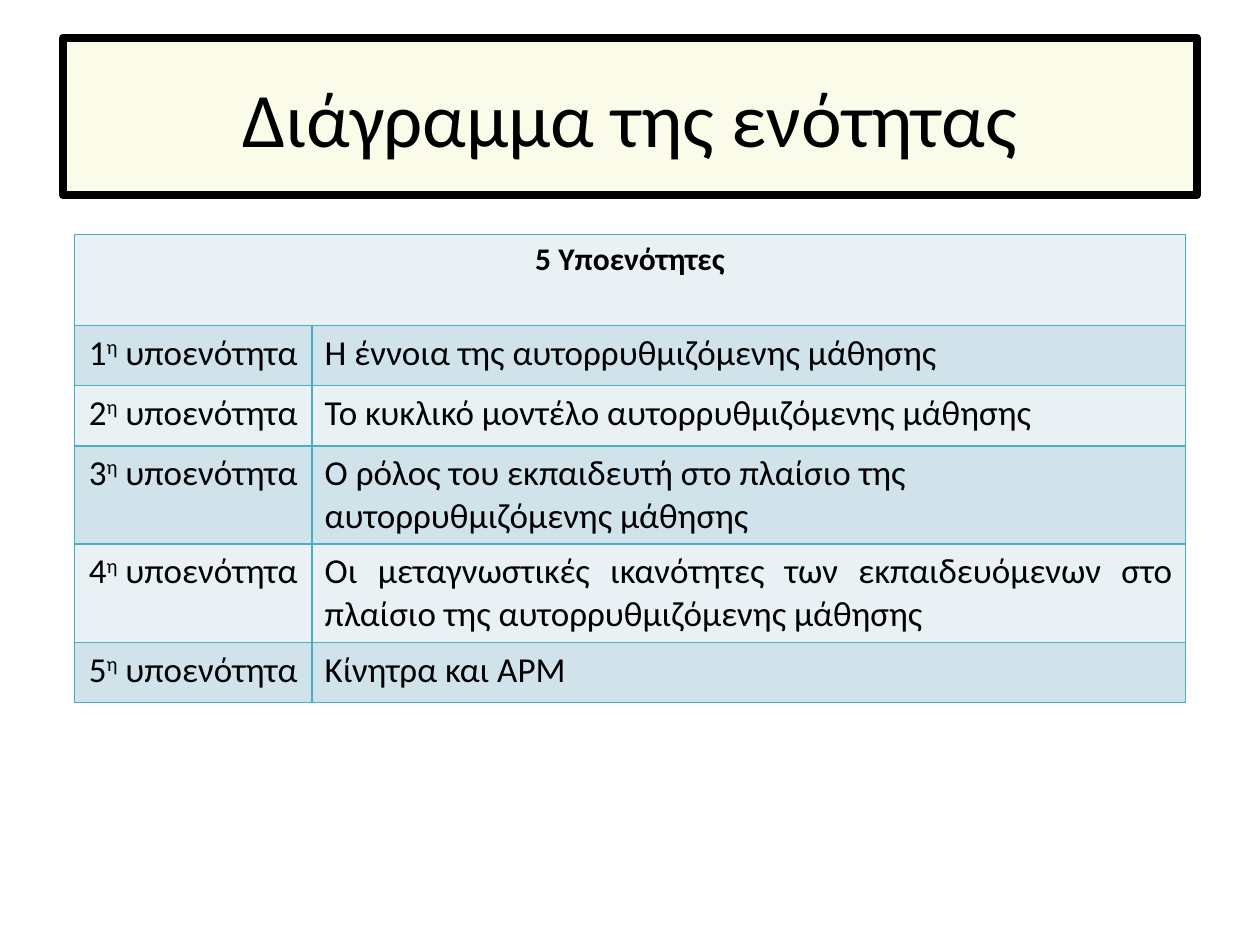
from lxml import etree
from pptx import Presentation
from pptx.dml.color import RGBColor
from pptx.enum.text import MSO_ANCHOR, PP_ALIGN
from pptx.oxml.ns import qn
from pptx.util import Pt

CENTER = PP_ALIGN.CENTER
JUSTIFY = PP_ALIGN.JUSTIFY
LEFT = PP_ALIGN.LEFT
MIDDLE = MSO_ANCHOR.MIDDLE

BLACK = RGBColor(0x00, 0x00, 0x00)
CREAM = RGBColor(0xFB, 0xFB, 0xE9)
TEAL = RGBColor(0x4B, 0xAC, 0xC6)
PALE_BLUE = RGBColor(0xE9, 0xF1, 0xF5)
LIGHT_BLUE = RGBColor(0xD0, 0xE3, 0xEA)

FONT = "Calibri"
TITLE_ONLY = 5
TITLE = "Διάγραμμα της ενότητας"
TABLE_HEADING = "5 Υποενότητες"
SUBUNITS = [
    ("Η έννοια της αυτορρυθμιζόμενης μάθησης", JUSTIFY),
    ("Το κυκλικό μοντέλο αυτορρυθμιζόμενης μάθησης", JUSTIFY),
    ("Ο ρόλος του εκπαιδευτή στο πλαίσιο της αυτορρυθμιζόμενης μάθησης", LEFT),
    ("Οι μεταγνωστικές ικανότητες των εκπαιδευόμενων στο πλαίσιο της "
     "αυτορρυθμιζόμενης μάθησης", JUSTIFY),
    ("Κίνητρα και ΑΡΜ", JUSTIFY),
]
COLUMN_SHARES = [0.214, 0.786]
ROW_HEIGHTS = [52, 34.4, 34.4, 56, 56, 34.4]


def write_text(paragraph, text, size=20, bold=False, align=LEFT, baseline=0):
    """Add a formatted run to a paragraph."""
    paragraph.alignment = align
    run = paragraph.add_run()
    run.text = text
    run.font.name = FONT
    run.font.size = Pt(size)
    run.font.bold = bold
    run.font.color.rgb = BLACK
    if baseline:
        run._r.get_or_add_rPr().set("baseline", str(baseline * 1000))


def style_cell(cell, fill):
    """Fill a cell and draw its four borders."""
    cell.fill.solid()
    cell.fill.fore_color.rgb = fill
    properties = cell._tc.get_or_add_tcPr()
    for position, side in enumerate(("lnL", "lnR", "lnT", "lnB")):
        border = etree.Element(qn(f"a:{side}"), w=str(Pt(1)))
        solid = etree.SubElement(border, qn("a:solidFill"))
        etree.SubElement(solid, qn("a:srgbClr"), val=str(TEAL))
        properties.insert(position, border)


def add_title(slide, left, top, width, height):
    """Place the framed title in the given box."""
    title = slide.shapes.title
    title.left, title.top = Pt(left), Pt(top)
    title.width, title.height = Pt(width), Pt(height)
    title.fill.solid()
    title.fill.fore_color.rgb = CREAM
    title.line.color.rgb = BLACK
    title.line.width = Pt(4.5)
    etree.SubElement(title.line._get_or_add_ln(), qn("a:round"))
    title.text_frame.vertical_anchor = MIDDLE
    write_text(title.text_frame.paragraphs[0], TITLE, size=44, align=CENTER)


def add_subunit_table(slide, left, top, width):
    """Place the table of subunits at the given corner and width."""
    table = slide.shapes.add_table(
        len(ROW_HEIGHTS), len(COLUMN_SHARES),
        Pt(left), Pt(top), Pt(width), Pt(sum(ROW_HEIGHTS))).table
    for column, share in zip(table.columns, COLUMN_SHARES):
        column.width = Pt(width * share)
    for index, (row, height) in enumerate(zip(table.rows, ROW_HEIGHTS)):
        row.height = Pt(height)
        for cell in row.cells:
            style_cell(cell, LIGHT_BLUE if index % 2 else PALE_BLUE)

    heading = table.cell(0, 0)
    heading.merge(table.cell(0, 1))
    write_text(heading.text_frame.paragraphs[0], TABLE_HEADING,
               size=18, bold=True, align=CENTER)
    for number, (topic, align) in enumerate(SUBUNITS, start=1):
        label = table.cell(number, 0).text_frame.paragraphs[0]
        write_text(label, str(number), align=CENTER)
        write_text(label, "η", align=CENTER, baseline=30)
        write_text(label, " υποενότητα", align=CENTER)
        write_text(table.cell(number, 1).text_frame.paragraphs[0], topic, align=align)


def main():
    """Build and save the presentation."""
    presentation = Presentation()
    presentation.slide_width, presentation.slide_height = Pt(720), Pt(540)
    slide = presentation.slides.add_slide(presentation.slide_layouts[TITLE_ONLY])
    add_title(slide, 36, 21.6, 648, 90)
    add_subunit_table(slide, 42.5, 134, 635)
    presentation.save("out.pptx")


if __name__ == "__main__":
    main()
